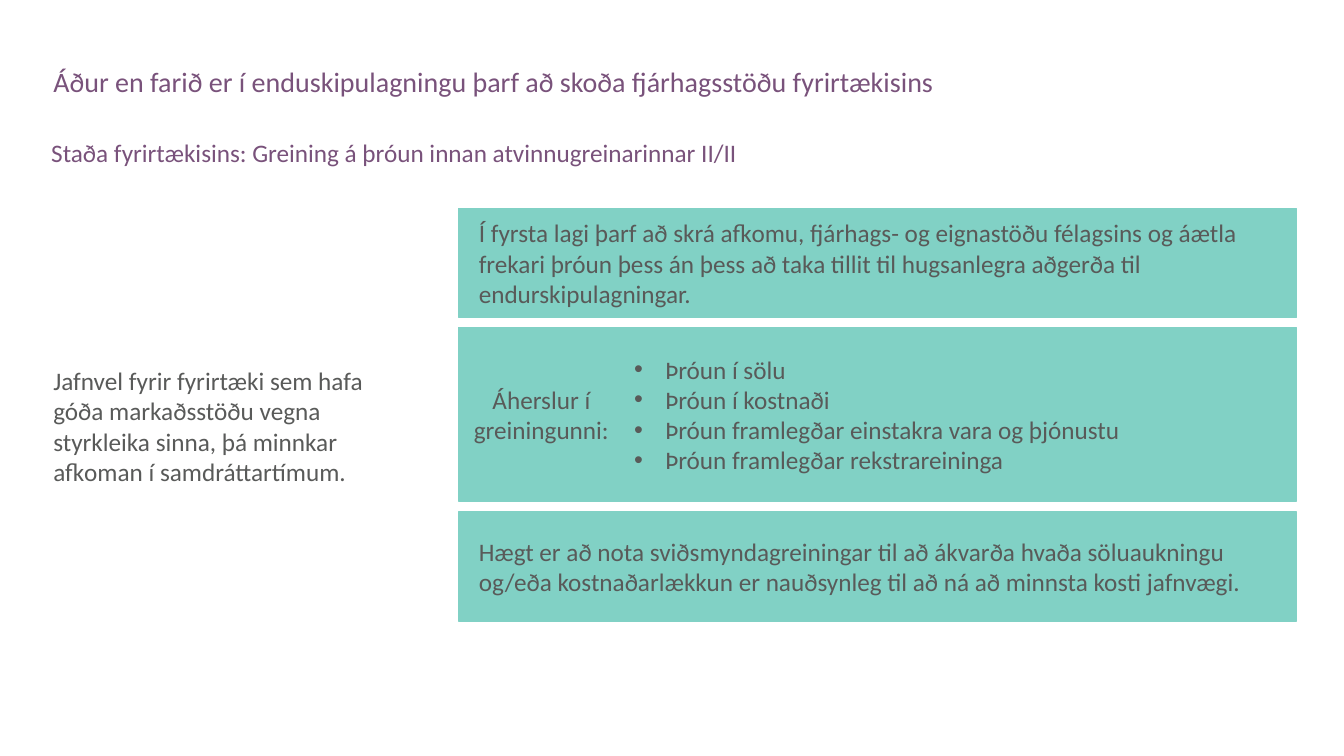
from dataclasses import dataclass

from lxml import etree
from pptx import Presentation
from pptx.dml.color import RGBColor
from pptx.enum import shapes, text
from pptx.oxml import ns
from pptx.util import Inches, Pt

FONT = "Calibri"
PURPLE, GREY, TEAL = "79527B", "595A59", "81D1C5"
MIDDLE, TOP = text.MSO_ANCHOR.MIDDLE, text.MSO_ANCHOR.TOP
LEFT, CENTER = text.PP_ALIGN.LEFT, text.PP_ALIGN.CENTER


@dataclass
class Panel:
    left: float
    top: float
    width: float
    height: float
    lines: list[str]
    margin: float = 0
    bullet: bool = False
    align: text.PP_ALIGN = LEFT


def rgb(value: str) -> RGBColor:
    return RGBColor.from_string(value)


def place(shape, left: float, top: float, width: float, height: float) -> None:
    shape.left, shape.top = Inches(left), Inches(top)
    shape.width, shape.height = Inches(width), Inches(height)


def set_indent(paragraph, margin: float, bullet: bool) -> None:
    """Set the left margin and, for a list item, a hanging bullet."""
    properties = paragraph._p.get_or_add_pPr()
    properties.set("marL", str(Inches(margin)))
    properties.set("indent", str(-Inches(margin) if bullet else 0))
    if bullet:
        colour = etree.SubElement(properties, ns.qn("a:buClr"))
        etree.SubElement(colour, ns.qn("a:srgbClr"), val=GREY)
        etree.SubElement(properties, ns.qn("a:buFont"), typeface="Arial")
        etree.SubElement(properties, ns.qn("a:buChar"), char="•")


def write(shape, lines: list[str], size: float = 18, colour: str = GREY,
          anchor=MIDDLE, align=LEFT, spacing: float = 1,
          margin: float = 0, bullet: bool = False) -> None:
    frame = shape.text_frame
    frame.word_wrap = True
    frame.auto_size = text.MSO_AUTO_SIZE.NONE
    frame.vertical_anchor = anchor
    frame.margin_left = frame.margin_right = Inches(0.1)
    frame.margin_top = frame.margin_bottom = Inches(0.05)
    for index, line in enumerate(lines):
        paragraph = frame.add_paragraph() if index else frame.paragraphs[0]
        paragraph.alignment = align
        paragraph.line_spacing = spacing
        paragraph.space_before = Pt(0)
        set_indent(paragraph, margin, bullet)
        run = paragraph.add_run()
        run.text = line
        run.font.name = FONT
        run.font.size = Pt(size)
        run.font.color.rgb = rgb(colour)


def add_text(slide, left: float, top: float, width: float, height: float,
             line: str, **text_format) -> None:
    box = slide.shapes.add_textbox(*map(Inches, (left, top, width, height)))
    write(box, [line], **text_format)


def add_panel(slide, panel: Panel) -> None:
    shape = slide.shapes.add_shape(
        shapes.MSO_SHAPE.RECTANGLE,
        *map(Inches, (panel.left, panel.top, panel.width, panel.height)))
    shape.shadow.inherit = False
    shape.fill.solid()
    shape.fill.fore_color.rgb = rgb(TEAL)
    shape.line.color.rgb = rgb(TEAL)
    shape.line.width = Pt(1)
    write(shape, panel.lines, margin=panel.margin, bullet=panel.bullet,
          align=panel.align)


# Panel column: three rows, the middle one split into label and list
COLUMN_LEFT, COLUMN_WIDTH, LABEL_WIDTH = 4.55, 8.31, 1.64
OUTER_HEIGHT, MIDDLE_HEIGHT = 1.08, 1.72
FIRST_TOP, MIDDLE_TOP, LAST_TOP = 2.07, 3.25, 5.08

PANELS = [
    Panel(COLUMN_LEFT, FIRST_TOP, COLUMN_WIDTH, OUTER_HEIGHT,
          ["Í fyrsta lagi þarf að skrá afkomu, fjárhags- og eignastöðu "
           "félagsins og áætla frekari þróun þess án þess að taka tillit til "
           "hugsanlegra aðgerða til endurskipulagningar."], margin=0.1),
    Panel(COLUMN_LEFT, MIDDLE_TOP, LABEL_WIDTH, MIDDLE_HEIGHT,
          ["Áherslur í greiningunni:"], align=CENTER),
    Panel(COLUMN_LEFT + LABEL_WIDTH, MIDDLE_TOP, COLUMN_WIDTH - LABEL_WIDTH,
          MIDDLE_HEIGHT,
          ["Þróun í sölu", "Þróun í kostnaði",
           "Þróun framlegðar einstakra vara og þjónustu",
           "Þróun framlegðar rekstrareininga"], margin=0.31, bullet=True),
    Panel(COLUMN_LEFT, LAST_TOP, COLUMN_WIDTH, OUTER_HEIGHT,
          ["Hægt er að nota sviðsmyndagreiningar til að ákvarða hvaða "
           "söluaukningu og/eða kostnaðarlækkun er nauðsynleg til að ná að "
           "minnsta kosti jafnvægi."], margin=0.1),
]


def main() -> None:
    presentation = Presentation()
    presentation.slide_width = Inches(13.33)
    presentation.slide_height = Inches(7.5)
    slide = presentation.slides.add_slide(presentation.slide_layouts[5])

    # Title and subtitle
    title = slide.shapes.title
    place(title, 0.43, 0.63, 12.54, 0.64)
    write(title, ["Áður en farið er í enduskipulagningu þarf að skoða "
                  "fjárhagsstöðu fyrirtækisins"],
          size=20, colour=PURPLE, anchor=TOP, spacing=0.9)
    add_text(slide, 0.41, 1.35, 12.56, 0.54,
             "Staða fyrirtækisins: Greining á þróun innan "
             "atvinnugreinarinnar II/II",
             colour=PURPLE, anchor=TOP, spacing=0.9)

    # Statement on the left
    add_text(slide, 0.43, 1.79, 3.49, 4.87,
             "Jafnvel fyrir fyrirtæki sem hafa góða markaðsstöðu vegna "
             "styrkleika sinna, þá minnkar afkoman í samdráttartímum.")

    # Panels on the right
    for panel in PANELS:
        add_panel(slide, panel)

    presentation.save("out.pptx")


if __name__ == "__main__":
    main()
